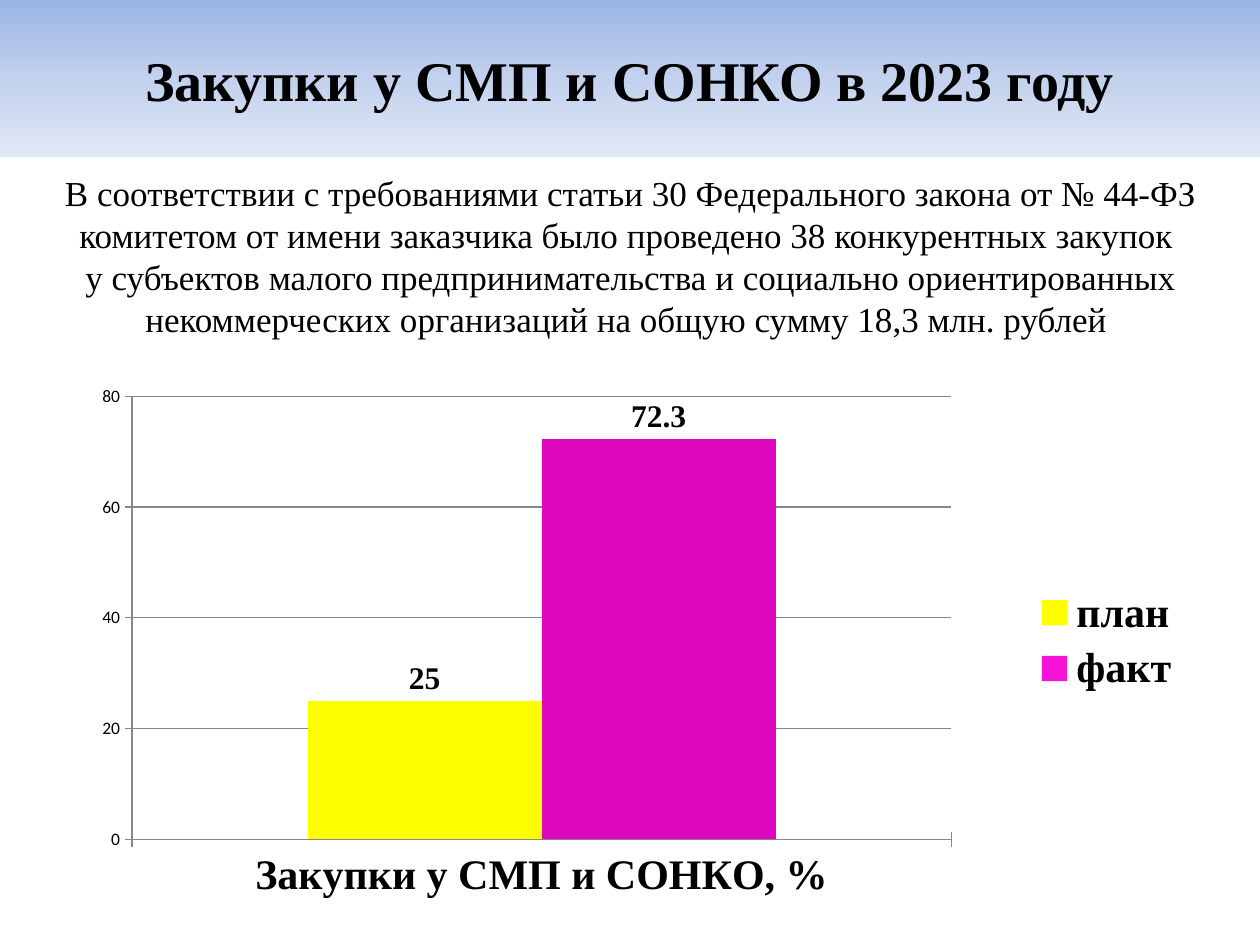
import copy

import lxml.etree
import pptx
import pptx.chart.data
import pptx.dml.color
import pptx.enum.chart
import pptx.enum.dml
import pptx.enum.shapes
import pptx.enum.text
import pptx.oxml
import pptx.oxml.ns
import pptx.util
from pptx.util import Inches

SERIF = "Times New Roman"


def color(value):
    return pptx.dml.color.RGBColor.from_string(value)


def write(box, text, size, bold=False, space_before=0, anchor="TOP"):
    frame = box.text_frame
    frame.word_wrap = True
    frame.vertical_anchor = getattr(pptx.enum.text.MSO_ANCHOR, anchor)
    para = frame.paragraphs[0]
    para.text = text
    para.alignment = pptx.enum.text.PP_ALIGN.CENTER
    para.space_before = pptx.util.Pt(space_before)
    for span in para.runs:
        span.font.name = SERIF
        span.font.size = pptx.util.Pt(size)
        span.font.bold = bold
        span.font.color.rgb = color("000000")


deck = pptx.Presentation()
deck.slide_width, deck.slide_height = Inches(10), Inches(7.5)
page = deck.slides.add_slide(deck.slide_layouts[6])

# Title band with a three-stop vertical gradient
band = page.shapes.add_shape(pptx.enum.shapes.MSO_SHAPE.RECTANGLE,
                             0, 0, Inches(10), Inches(1.25))
band.shadow.inherit = False
band.line.fill.background()
band.fill.gradient()
band.fill.gradient_angle = 270
first_stop = band.fill.gradient_stops[0]
first_stop.color.rgb = color("9AB5E4")
stop_list = band.element.spPr.find(".//" + pptx.oxml.ns.qn("a:gsLst"))
stop_list.insert(1, copy.deepcopy(stop_list[0]))
for stop, (position, shade) in zip(
        band.fill.gradient_stops, [(0, "9AB5E4"), (0.5, "C2D1ED"), (1, "E1E8F5")]):
    stop.position = position
    stop.color.rgb = color(shade)
write(band, "Закупки у СМП и СОНКО в 2023 году", 32, bold=True, anchor="MIDDLE")

# Introductory text
intro = page.shapes.add_textbox(Inches(0.28), Inches(1.31), Inches(9.45), Inches(1.5))
write(intro,
      "В соответствии с требованиями статьи 30 Федерального закона от № 44-ФЗ "
      "комитетом от имени заказчика было проведено 38 конкурентных закупок \n"
      "у субъектов малого предпринимательства и социально ориентированных "
      "некоммерческих организаций на общую сумму 18,3 млн. рублей ",
      20, space_before=4)

# Column chart: plan against fact
data = pptx.chart.data.CategoryChartData()
data.categories = ["Закупки у СМП и СОНКО, %"]
data.add_series("план", [25])
data.add_series("факт", [72.3])
chart = page.shapes.add_chart(
    pptx.enum.chart.XL_CHART_TYPE.COLUMN_CLUSTERED,
    Inches(0.51), Inches(2.96), Inches(8.98), Inches(4.25), data).chart
chart.has_title = False
chart.font.name = "Calibri"
chart.font.size = pptx.util.Pt(10)
chart.font.color.rgb = color("000000")
plot = chart.plots[0]
plot.vary_by_categories = False
plot.gap_width = 150
plot.overlap = 0

# Series colours and value labels
for series, shade in zip(plot.series, ["FFFF00", "F814D7"]):
    series.format.fill.solid()
    series.format.fill.fore_color.rgb = color(shade)
    labels = series.data_labels
    labels.show_value = True
    labels.position = pptx.enum.chart.XL_LABEL_POSITION.OUTSIDE_END
    labels.font.name = SERIF
    labels.font.size = pptx.util.Pt(18)
    labels.font.bold = True
fact_bar = plot.series[1].points[0].format.fill
fact_bar.solid()
fact_bar.fore_color.rgb = color("DF07C0")

# Axes, gridlines and legend
chart.value_axis.minimum_scale = 0
chart.value_axis.maximum_scale = 80
chart.value_axis.major_unit = 20
chart.value_axis.has_major_gridlines = True
for axis in (chart.category_axis, chart.value_axis):
    axis.major_tick_mark = pptx.enum.chart.XL_TICK_MARK.CROSS
for lines in (chart.category_axis, chart.value_axis, chart.value_axis.major_gridlines):
    lines.format.line.color.rgb = color("878787")
    lines.format.line.width = pptx.util.Pt(0.75)
chart.has_legend = True
chart.legend.position = pptx.enum.chart.XL_LEGEND_POSITION.RIGHT
chart.legend.include_in_layout = False
for font in (chart.category_axis.tick_labels.font, chart.legend.font):
    font.name = SERIF
    font.size = pptx.util.Pt(24)
    font.bold = True

# Fixed inner plot area
qn = pptx.oxml.ns.qn
plot_area = chart.element.find(".//" + qn("c:plotArea"))
for old_layout in plot_area.findall(qn("c:layout")):
    plot_area.remove(old_layout)
layout = lxml.etree.Element(qn("c:layout"))
manual = lxml.etree.SubElement(layout, qn("c:manualLayout"))
for tag, value in [("layoutTarget", "inner"), ("xMode", "edge"), ("yMode", "edge"),
                   ("x", "0.06"), ("y", "0.044"), ("w", "0.724"), ("h", "0.827")]:
    lxml.etree.SubElement(manual, qn("c:" + tag)).set("val", value)
plot_area.insert(0, layout)

deck.save("out.pptx")
